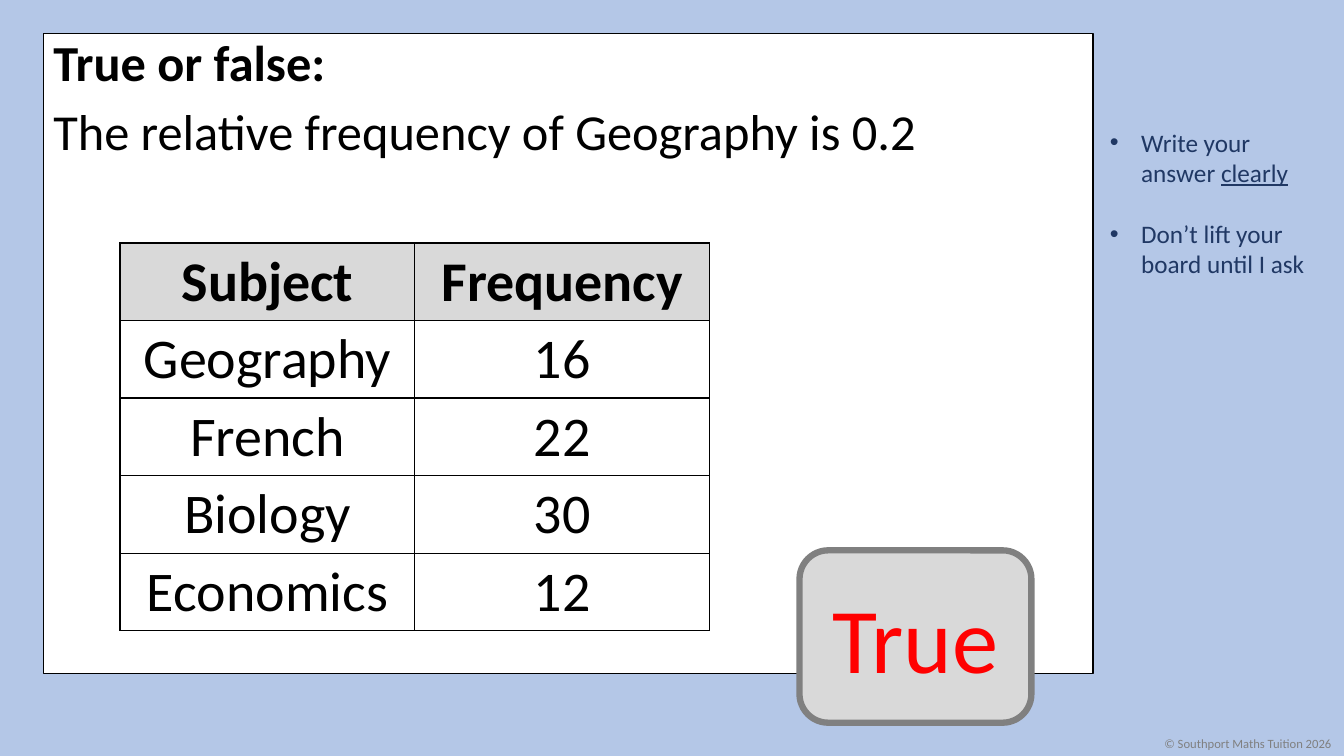
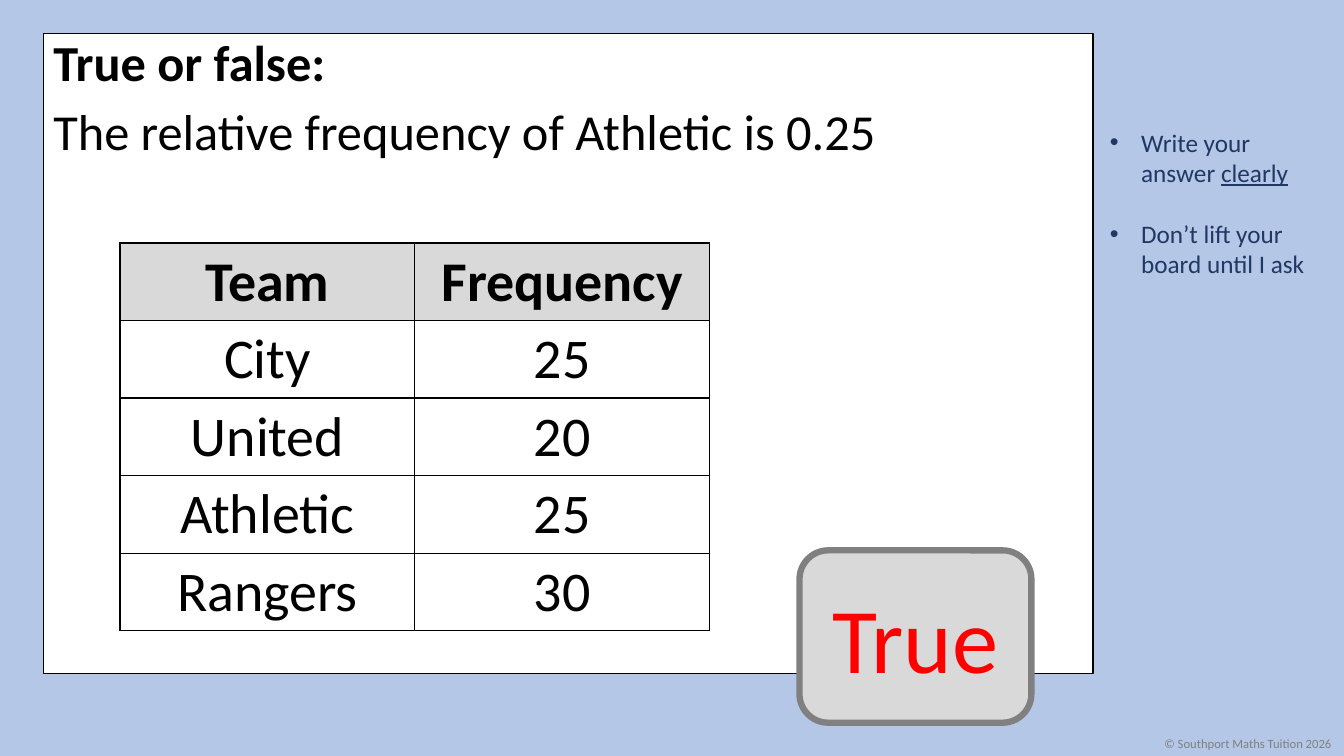
from dataclasses import dataclass

from lxml.etree import SubElement
from pptx import Presentation
from pptx.dml.color import RGBColor
from pptx.enum.shapes import MSO_SHAPE
from pptx.enum.text import MSO_ANCHOR, PP_ALIGN
from pptx.oxml import parse_xml
from pptx.oxml.ns import nsdecls, qn
from pptx.shapes.autoshape import Shape
from pptx.slide import Slide
from pptx.table import _Cell
from pptx.text.text import Font, _Paragraph
from pptx.util import Inches, Length, Pt

SKY = RGBColor(0xB4, 0xC7, 0xE7)
NAVY = RGBColor(0x20, 0x38, 0x64)
WHITE = RGBColor(0xFF, 0xFF, 0xFF)
BLACK = RGBColor(0x00, 0x00, 0x00)
SILVER = RGBColor(0xD9, 0xD9, 0xD9)
GREY = RGBColor(0x80, 0x80, 0x80)
RED = RGBColor(0xFF, 0x00, 0x00)
FACE = "Calibri"


@dataclass(frozen=True)
class Box:
    left: float
    top: float
    width: float
    height: float

    def spans(self) -> tuple[Length, ...]:
        return tuple(Inches(n) for n in (self.left, self.top, self.width, self.height))


@dataclass(frozen=True)
class Quiz:
    claim: str
    rows: tuple[tuple[str, str], ...]
    answer: str


PANEL = Box(0.43, 0.33, 10.41, 6.35)
RULES = Box(10.91, 1.21, 2.32, 1.62)
FOOTER = Box(11.45, 7.25, 1.88, 0.25)
TABLE = Box(1.19, 2.41, 5.85, 3.85)
BADGE = Box(7.93, 5.46, 2.3, 1.71)

QUIZZES = (
    Quiz(
        "The relative frequency of Geography is 0.2",
        (
            ("Subject", "Frequency"),
            ("Geography", "16"),
            ("French", "22"),
            ("Biology", "30"),
            ("Economics", "12"),
        ),
        "True",
    ),
    Quiz(
        "The relative frequency of Athletic is 0.25",
        (
            ("Team", "Frequency"),
            ("City", "25"),
            ("United", "20"),
            ("Athletic", "25"),
            ("Rangers", "30"),
        ),
        "True",
    ),
)


def style(font: Font, size: float, color: RGBColor, bold: bool = False) -> None:
    font.name = FACE
    font.size = Pt(size)
    font.color.rgb = color
    font.bold = bold


def add_shape(
    slide: Slide, kind: MSO_SHAPE, box: Box, fill: RGBColor, line: RGBColor, width: float
) -> Shape:
    shape = slide.shapes.add_shape(kind, *box.spans())
    shape.shadow.inherit = False
    shape.fill.solid()
    shape.fill.fore_color.rgb = fill
    shape.line.color.rgb = line
    shape.line.width = Pt(width)
    return shape


def add_panel(slide: Slide, claim: str) -> None:
    frame = add_shape(slide, MSO_SHAPE.RECTANGLE, PANEL, WHITE, BLACK, 1).text_frame
    frame.vertical_anchor = MSO_ANCHOR.TOP
    frame.text = f"True or false:\n{claim}"
    head, body = frame.paragraphs
    body.space_before = Pt(10)
    for para in (head, body):
        para.alignment = PP_ALIGN.LEFT
        para.line_spacing = 0.9
        style(para.runs[0].font, 36, BLACK, para is head)


def add_bullet(para: _Paragraph) -> None:
    props = para._p.get_or_add_pPr()
    props.set("marL", str(Inches(0.31)))
    props.set("indent", str(-Inches(0.31)))
    SubElement(props, qn("a:buFont")).set("typeface", "Arial")
    SubElement(props, qn("a:buChar")).set("char", "•")


def add_rules(slide: Slide) -> None:
    frame = slide.shapes.add_textbox(*RULES.spans()).text_frame
    frame.word_wrap = True
    frame.text = "Write your answer \nDon’t lift your board until I ask"
    first = frame.paragraphs[0]
    first.space_after = Pt(22)
    stress = first.add_run()
    stress.text = "clearly"
    stress.font.underline = True
    for para in frame.paragraphs:
        add_bullet(para)
        for run in para.runs:
            style(run.font, 18, NAVY)


def add_footer(slide: Slide) -> None:
    frame = slide.shapes.add_textbox(*FOOTER.spans()).text_frame
    frame.word_wrap = False
    frame.text = "© Southport Maths Tuition 2026"
    style(frame.paragraphs[0].runs[0].font, 9, GREY)


def add_edges(cell: _Cell) -> None:
    props = cell._tc.get_or_add_tcPr()
    for spot, side in enumerate(("lnL", "lnR", "lnT", "lnB")):
        edge = parse_xml(
            f'<a:{side} {nsdecls("a")} w="{Pt(1)}"><a:solidFill>'
            f'<a:srgbClr val="{BLACK}"/></a:solidFill></a:{side}>'
        )
        props.insert(spot, edge)


def add_table(slide: Slide, rows: tuple[tuple[str, str], ...]) -> None:
    table = slide.shapes.add_table(len(rows), len(rows[0]), *TABLE.spans()).table
    table.first_row = False
    table.horz_banding = False
    for i, row in enumerate(rows):
        for j, text in enumerate(row):
            cell = table.cell(i, j)
            cell.text = text
            cell.fill.solid()
            cell.fill.fore_color.rgb = WHITE if i else SILVER
            add_edges(cell)
            para = cell.text_frame.paragraphs[0]
            para.alignment = PP_ALIGN.CENTER
            style(para.runs[0].font, 40, BLACK, i == 0)


def add_badge(slide: Slide, answer: str) -> None:
    shape = add_shape(slide, MSO_SHAPE.ROUNDED_RECTANGLE, BADGE, SILVER, GREY, 4.5)
    frame = shape.text_frame
    frame.text = answer
    frame.vertical_anchor = MSO_ANCHOR.MIDDLE
    para = frame.paragraphs[0]
    para.alignment = PP_ALIGN.CENTER
    style(para.runs[0].font, 66, RED)


def main() -> None:
    deck = Presentation()
    deck.slide_width = Inches(13.33)
    deck.slide_height = Inches(7.5)
    ground = deck.slide_master.background.fill
    ground.solid()
    ground.fore_color.rgb = SKY
    for quiz in QUIZZES:
        slide = deck.slides.add_slide(deck.slide_layouts[6])
        add_panel(slide, quiz.claim)
        add_rules(slide)
        add_footer(slide)
        add_table(slide, quiz.rows)
        add_badge(slide, quiz.answer)
    deck.save("out.pptx")


if __name__ == "__main__":
    main()
